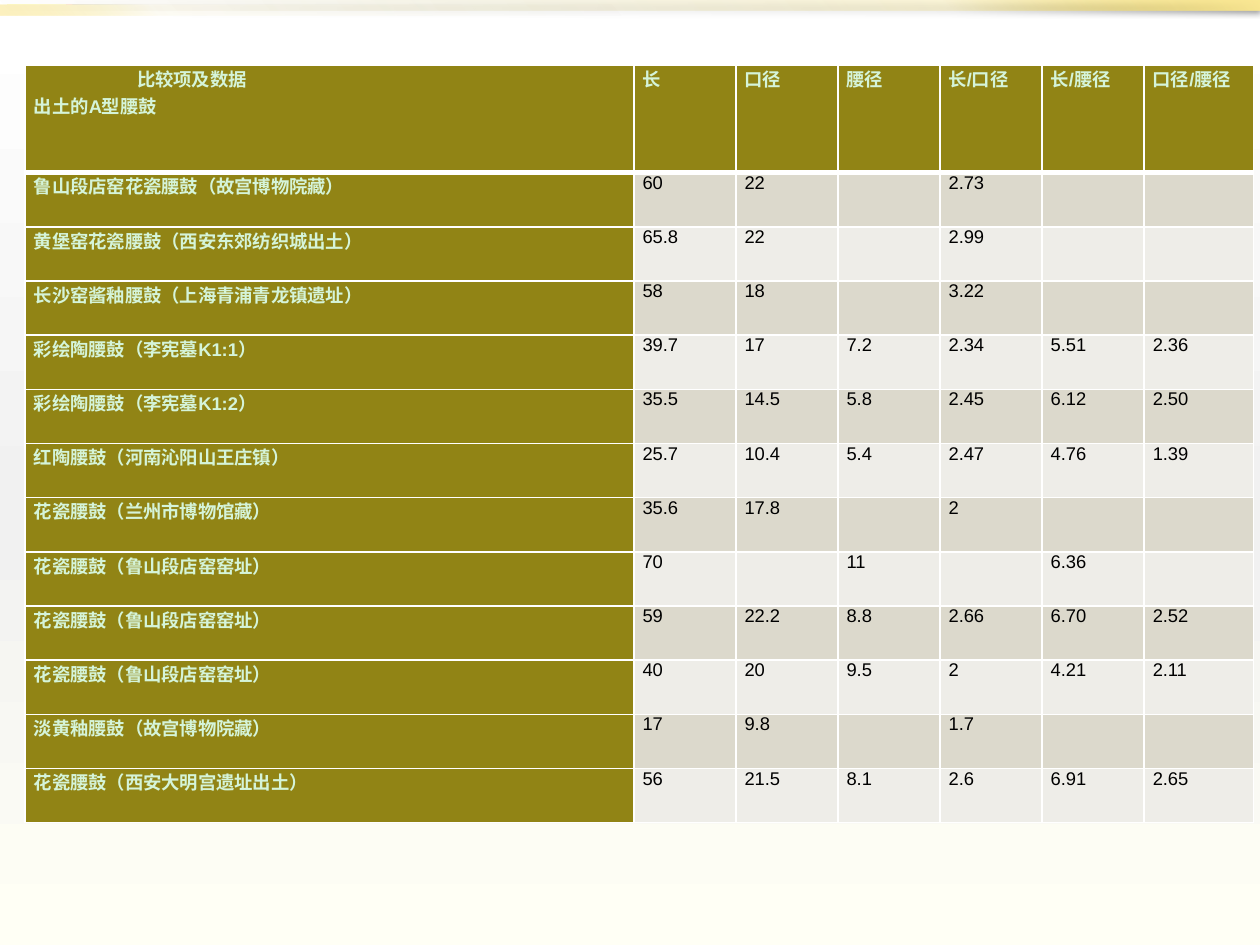
import pptx
import pptx.util
import pptx.oxml
import pptx.oxml.ns
import pptx.dml.color
import pptx.enum.shapes
import pptx.enum.text
from pptx.util import Inches, Pt

HEAD = ["比较项及数据\n出土的A型腰鼓", "长", "口径", "腰径", "长/口径", "长/腰径", "口径/腰径"]
DRUMS = [
    ("鲁山段店窑花瓷腰鼓（故宫博物院藏）", "60", "22", "", "2.73", "", ""),
    ("黄堡窑花瓷腰鼓（西安东郊纺织城出土）", "65.8", "22", "", "2.99", "", ""),
    ("长沙窑酱釉腰鼓（上海青浦青龙镇遗址）", "58", "18", "", "3.22", "", ""),
    ("彩绘陶腰鼓（李宪墓K1:1）", "39.7", "17", "7.2", "2.34", "5.51", "2.36"),
    ("彩绘陶腰鼓（李宪墓K1:2）", "35.5", "14.5", "5.8", "2.45", "6.12", "2.50"),
    ("红陶腰鼓（河南沁阳山王庄镇）", "25.7", "10.4", "5.4", "2.47", "4.76", "1.39"),
    ("花瓷腰鼓（兰州市博物馆藏）", "35.6", "17.8", "", "2", "", ""),
    ("花瓷腰鼓（鲁山段店窑窑址）", "70", "", "11", "", "6.36", ""),
    ("花瓷腰鼓（鲁山段店窑窑址）", "59", "22.2", "8.8", "2.66", "6.70", "2.52"),
    ("花瓷腰鼓（鲁山段店窑窑址）", "40", "20", "9.5", "2", "4.21", "2.11"),
    ("淡黄釉腰鼓（故宫博物院藏）", "17", "9.8", "", "1.7", "", ""),
    ("花瓷腰鼓（西安大明宫遗址出土）", "56", "21.5", "8.1", "2.6", "6.91", "2.65"),
]
WIDTHS = [4.83] + [0.81] * 5 + [0.87]
HEIGHTS = [0.85] + [0.43] * len(DRUMS)
HUES = {"olive": "918415", "odd": "DCD9CC", "even": "EEEDE8", "mint": "D5F4D9",
        "black": "000000", "line": "FFFFFF"}
# Gradient stops: place, colour, opacity (all in percent)
SKY = [(0, "FFFFFF", 100), (55, "F1F1F1", 100), (100, "FFFFF5", 100)]
# Bars: left, top, width, height, angle, stops, shadow
BARS = [
    (0, 0, 10, 0.08, 315, [(0, "7B6E00", 0), (75, "F0D23E", 20), (100, "FBE894", 100)], True),
    (0, 0.04, 5, 0.08, 135, [(0, "7B6E00", 0), (75, "F0D23E", 5), (100, "FBE894", 60)], False),
]
NS = pptx.oxml.ns.nsdecls("a")


def tint(name):
    return pptx.dml.color.RGBColor.from_string(HUES[name])


def blend(stops, angle):
    marks = "".join(
        f'<a:gs pos="{at * 1000}"><a:srgbClr val="{hue}">'
        f'<a:alpha val="{alpha * 1000}"/></a:srgbClr></a:gs>'
        for at, hue, alpha in stops)
    return pptx.oxml.parse_xml(
        f'<a:gradFill {NS} rotWithShape="1"><a:gsLst>{marks}</a:gsLst>'
        f'<a:lin ang="{angle * 60000}" scaled="0"/></a:gradFill>')


def swap(fill, props, stops, angle):
    """Put a gradient in the place of a plain fill."""
    fill.solid()
    old = props.find(pptx.oxml.ns.qn("a:solidFill"))
    props.replace(old, blend(stops, angle))


def add_bar(slide, left, top, width, height, angle, stops, shade):
    bar = slide.shapes.add_shape(pptx.enum.shapes.MSO_SHAPE.RECTANGLE,
                                 Inches(left), Inches(top), Inches(width), Inches(height))
    bar.shadow.inherit = False
    bar.line.fill.background()
    props = bar.element.spPr
    swap(bar.fill, props, stops, angle)
    if shade:
        props.find(pptx.oxml.ns.qn("a:effectLst")).append(pptx.oxml.parse_xml(
            f'<a:outerShdw {NS} blurRad="{Pt(3.1)}" dist="{Pt(1.6)}" dir="5400000">'
            '<a:srgbClr val="000000"><a:alpha val="38000"/></a:srgbClr></a:outerShdw>'))


def rule_cell(cell, row):
    props = cell._tc.get_or_add_tcPr()
    for place, side in enumerate("LRTB"):
        thick = 3 if (row, side) in [(0, "B"), (1, "T")] else 1
        props.insert(place, pptx.oxml.parse_xml(
            f'<a:ln{side} {NS} w="{Pt(thick)}"><a:solidFill>'
            f'<a:srgbClr val="{HUES["line"]}"/></a:solidFill></a:ln{side}>'))


def fill_cell(cell, text, row, col):
    label = row == 0 or col == 0
    cell.margin_left = cell.margin_right = Inches(0.07)
    cell.margin_top = cell.margin_bottom = 0
    cell.fill.solid()
    cell.fill.fore_color.rgb = tint("olive" if label else "odd" if row % 2 else "even")
    rule_cell(cell, row)
    cell.text_frame.text = text
    for para in cell.text_frame.paragraphs:
        para.alignment = pptx.enum.text.PP_ALIGN.JUSTIFY
        para.font.size = Pt(10.5)
        for run in para.runs:
            run.font.name = "Arial"
            run.font.size = Pt(10.5)
            run.font.bold = label
            run.font.color.rgb = tint("mint" if label else "black")


def main():
    deck = pptx.Presentation()
    deck.slide_width, deck.slide_height = Inches(10), Inches(7.5)
    slide = deck.slides.add_slide(deck.slide_layouts[6])

    # Backdrop and top bars
    back = slide.background.fill
    back.solid()
    swap(back, slide.element.cSld.bg.bgPr, SKY, 90)
    for bar in BARS:
        add_bar(slide, *bar)

    # Table of drum sizes
    rows = [HEAD] + DRUMS
    table = slide.shapes.add_table(len(rows), len(HEAD), Inches(0.2), Inches(0.52),
                                   Inches(sum(WIDTHS)), Inches(sum(HEIGHTS))).table
    table.first_row = table.horz_banding = False
    for column, width in zip(table.columns, WIDTHS):
        column.width = Inches(width)
    for line, height in zip(table.rows, HEIGHTS):
        line.height = Inches(height)
    for row, texts in enumerate(rows):
        for col, text in enumerate(texts):
            fill_cell(table.cell(row, col), text, row, col)

    # Indent of the upper corner label
    corner = table.cell(0, 0).text_frame.paragraphs[0]
    corner._p.get_or_add_pPr().set("indent", str(Inches(0.82)))

    deck.save("out.pptx")


if __name__ == "__main__":
    main()
